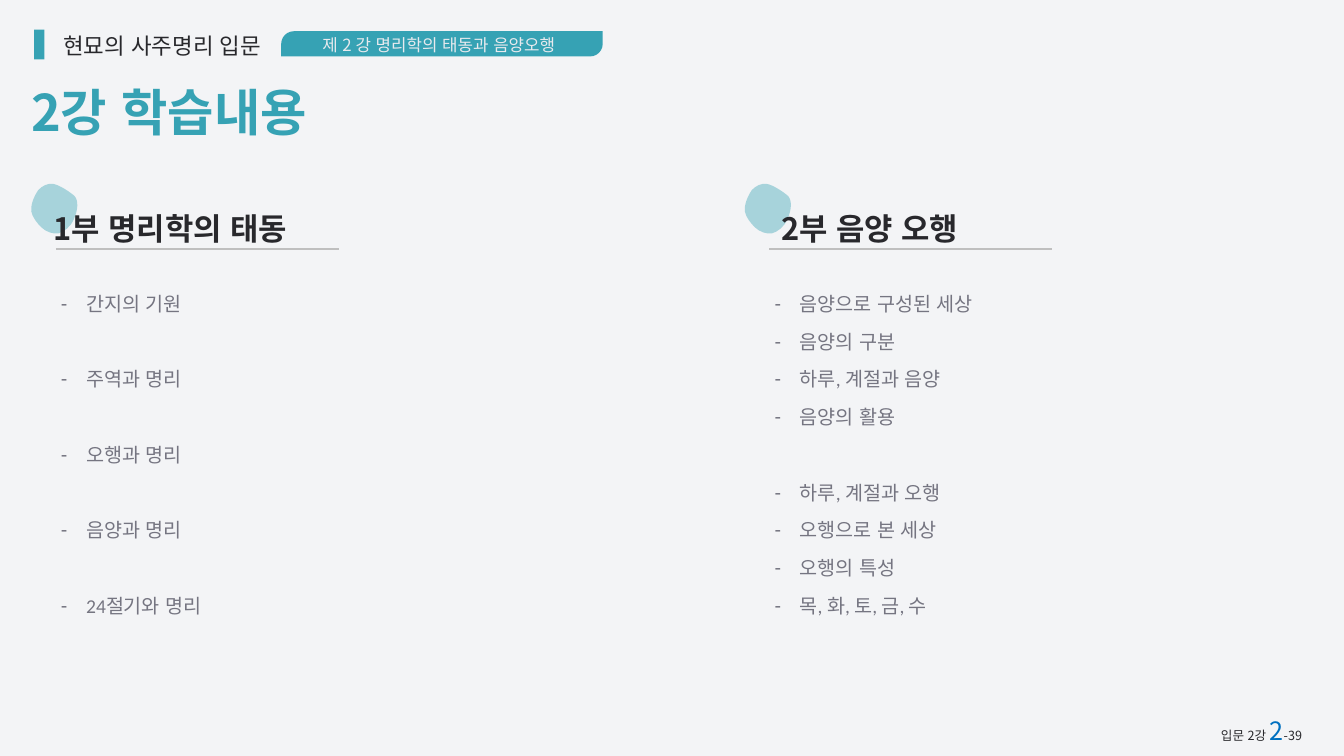
import pptx
import pptx.dml.color
import pptx.enum.lang
import pptx.enum.shapes
import pptx.enum.text
import pptx.oxml
import pptx.oxml.ns
import pptx.util
from pptx.util import Inches

TEAL, INK, GREY, RULE = "36A2B4", "28282C", "757581", "BFBFBF"
PALE, BLUE = "E8EAEE", "0070C0"
KOREAN, LATIN = "Noto Sans CJK KR", "Calibri"
LINE_PITCH = 53.9  # points between list lines
ALIGN = pptx.enum.text.PP_ALIGN
SHAPE = pptx.enum.shapes.MSO_SHAPE

# Blob outline in hundredths of an inch: start point, then cubic curves
BLOB_SIZE = (91, 99)
BLOB_START = (0, 54)
BLOB_CURVES = [
    ((-1, 42), (4, 27), (14, 12)),
    ((22, 4), (32, -2), (44, 0)),
    ((56, 2), (77, 16), (86, 24)),
    ((94, 33), (93, 52), (84, 71)),
    ((78, 85), (65, 95), (54, 98)),
    ((44, 100), (29, 95), (20, 86)),
    ((12, 78), (2, 66), (0, 54)),
]


def color(value):
    return pptx.dml.color.RGBColor.from_string(value)


def add_xml(parent, tag, **attributes):
    element = pptx.oxml.parse_xml(f"<a:{tag} {pptx.oxml.ns.nsdecls('a')}/>")
    for name, value in attributes.items():
        element.set(name, str(value))
    parent.append(element)
    return element


def style(font, size, shade, bold=False, name=KOREAN):
    font.size = pptx.util.Pt(size)
    font.bold = bold
    font.color.rgb = color(shade)
    font.name = name
    font.language_id = pptx.enum.lang.MSO_LANGUAGE_ID.KOREAN
    font._rPr.set("kern", "0")
    add_xml(font._rPr, "ea", typeface=KOREAN)


def place(shape, left, top, width, height):
    shape.left, shape.top = Inches(left), Inches(top)
    shape.width, shape.height = Inches(width), Inches(height)


def prepare(shape, wrap=True, anchor="MIDDLE"):
    frame = shape.text_frame
    frame.word_wrap = wrap
    frame.auto_size = pptx.enum.text.MSO_AUTO_SIZE.NONE
    frame.vertical_anchor = getattr(pptx.enum.text.MSO_ANCHOR, anchor)
    return frame


def write(shape, text, size, shade, align=ALIGN.LEFT, bold=False, wrap=True):
    para = prepare(shape, wrap).paragraphs[0]
    para.text = text
    para.alignment = align
    para.space_before = pptx.util.Pt(0)
    style(para.font, size, shade, bold)


def fill(shape, shade, opacity=100):
    shape.shadow.inherit = False
    shape.fill.solid()
    shape.fill.fore_color.rgb = color(shade)
    shape.line.fill.background()
    if opacity < 100:
        solid = shape.fill._xPr.find(".//" + pptx.oxml.ns.qn("a:srgbClr"))
        add_xml(solid, "alpha", val=opacity * 1000)


def add_text_box(page, left, top, width, height):
    return page.shapes.add_textbox(*map(Inches, (left, top, width, height)))


def add_block(page, kind, left, top, width, height, shade=TEAL, opacity=100):
    block = page.shapes.add_shape(kind, *map(Inches, (left, top, width, height)))
    fill(block, shade, opacity)
    return block


def add_header(page, left, top):
    # Course name beside its marker
    add_block(page, SHAPE.RECTANGLE, left, top, 0.2, 0.59)
    course = add_text_box(page, left + 0.37, top - 0.01, 4.34, 0.64)
    write(course, "현묘의 사주명리 입문", 32, INK, ALIGN.CENTER, wrap=False)
    # Lecture label
    pill = add_block(page, SHAPE.ROUND_2_DIAG_RECTANGLE, left + 4.9, top + 0.03, 6.38, 0.5)
    pill.adjustments[0], pill.adjustments[1] = 0.5, 0
    label = add_text_box(page, left + 5.11, top - 0.16, 5.83, 0.91)
    write(label, "제 2 강 명리학의 태동과 음양오행", 24, PALE, ALIGN.CENTER)


def add_blob(page, left, top):
    width, height = BLOB_SIZE
    builder = page.shapes.build_freeform(0, 0, scale=Inches(0.01))
    builder.add_line_segments([(width, 0), (width, height), (0, height)], close=True)
    blob = builder.convert_to_shape(Inches(left), Inches(top))
    # Curves take the place of the box's straight sides
    outline = blob._element.find(".//" + pptx.oxml.ns.qn("a:path"))
    for side in list(outline):
        outline.remove(side)
    outline.set("w", str(width))
    outline.set("h", str(height))
    for tag, points in [("moveTo", [BLOB_START])] + [("cubicBezTo", c) for c in BLOB_CURVES]:
        segment = add_xml(outline, tag)
        for x, y in points:
            add_xml(segment, "pt", x=x, y=y)
    add_xml(outline, "close")
    fill(blob, TEAL, 40)


def add_part(page, heading, body, left, top, title, shift, items, breaks):
    """One column; breaks holds the items that follow a one-line gap."""
    add_blob(page, left - 0.49, top)
    rule = page.shapes.add_connector(
        pptx.enum.shapes.MSO_CONNECTOR.STRAIGHT,
        *map(Inches, (left, top + 1.29, left + 5.61, top + 1.29)))
    rule.line.color.rgb = color(RULE)
    rule.line.width = pptx.util.Pt(3)
    add_xml(rule._element.spPr, "effectLst")
    # Heading
    place(heading, left + shift, top + 0.46, 10.16, 0.84)
    write(heading, title, 44, INK, bold=True)
    # List
    place(body, left, top + 1.81, 4.68, 6.82)
    frame = prepare(body, anchor="TOP")
    for index, item in enumerate(items):
        para = frame.add_paragraph() if index else frame.paragraphs[0]
        para.text = item
        para.alignment = ALIGN.JUSTIFY
        para.line_spacing = pptx.util.Pt(LINE_PITCH)
        para.space_before = pptx.util.Pt(LINE_PITCH if index in breaks else 0)
        properties = para._p.get_or_add_pPr()
        properties.set("marL", str(Inches(0.5)))
        properties.set("indent", str(Inches(-0.5)))
        add_xml(properties, "buChar", char="-")
        style(para.font, 28, GREY, name=LATIN)


def add_page_number(page, left, top):
    para = prepare(add_text_box(page, left, top, 2.4, 0.71)).paragraphs[0]
    for text, size, shade in (("입문 2강 ", 18, INK), ("2", 36, BLUE), ("-39", 18, INK)):
        span = para.add_run()
        span.text = text
        style(span.font, size, shade)


def main():
    deck = pptx.Presentation()
    deck.slide_width, deck.slide_height = Inches(26.67), Inches(15)
    page = deck.slides.add_slide(deck.slide_layouts.get_by_name("Comparison"))
    holders = {holder.placeholder_format.idx: holder for holder in page.placeholders}

    # Backdrop, behind everything else
    backdrop = add_block(page, SHAPE.RECTANGLE, 0, 0, 26.67, 15, PALE, 50)
    page.shapes._spTree.insert(2, backdrop._element)

    add_header(page, 0.68, 0.59)
    place(holders[0], 0.52, 1.55, 6.01, 1.31)
    write(holders[0], "2강 학습내용", 72, TEAL, bold=True, wrap=False)
    add_part(page, holders[1], holders[2], 1.11, 3.65, "1부 명리학의 태동", -0.15,
             ["간지의 기원", "주역과 명리", "오행과 명리", "음양과 명리", "24절기와 명리"],
             {1, 2, 3, 4})
    add_part(page, holders[3], holders[4], 15.27, 3.65, "2부 음양 오행", 0.13,
             ["음양으로 구성된 세상", "음양의 구분", "하루, 계절과 음양", "음양의 활용",
              "하루, 계절과 오행", "오행으로 본 세상", "오행의 특성", "목, 화, 토, 금, 수"],
             {4})
    # Headings stand in front of the blobs
    for index in (1, 3):
        page.shapes._spTree.append(holders[index]._element)
    add_page_number(page, 24.13, 14.14)
    deck.save("out.pptx")


if __name__ == "__main__":
    main()
